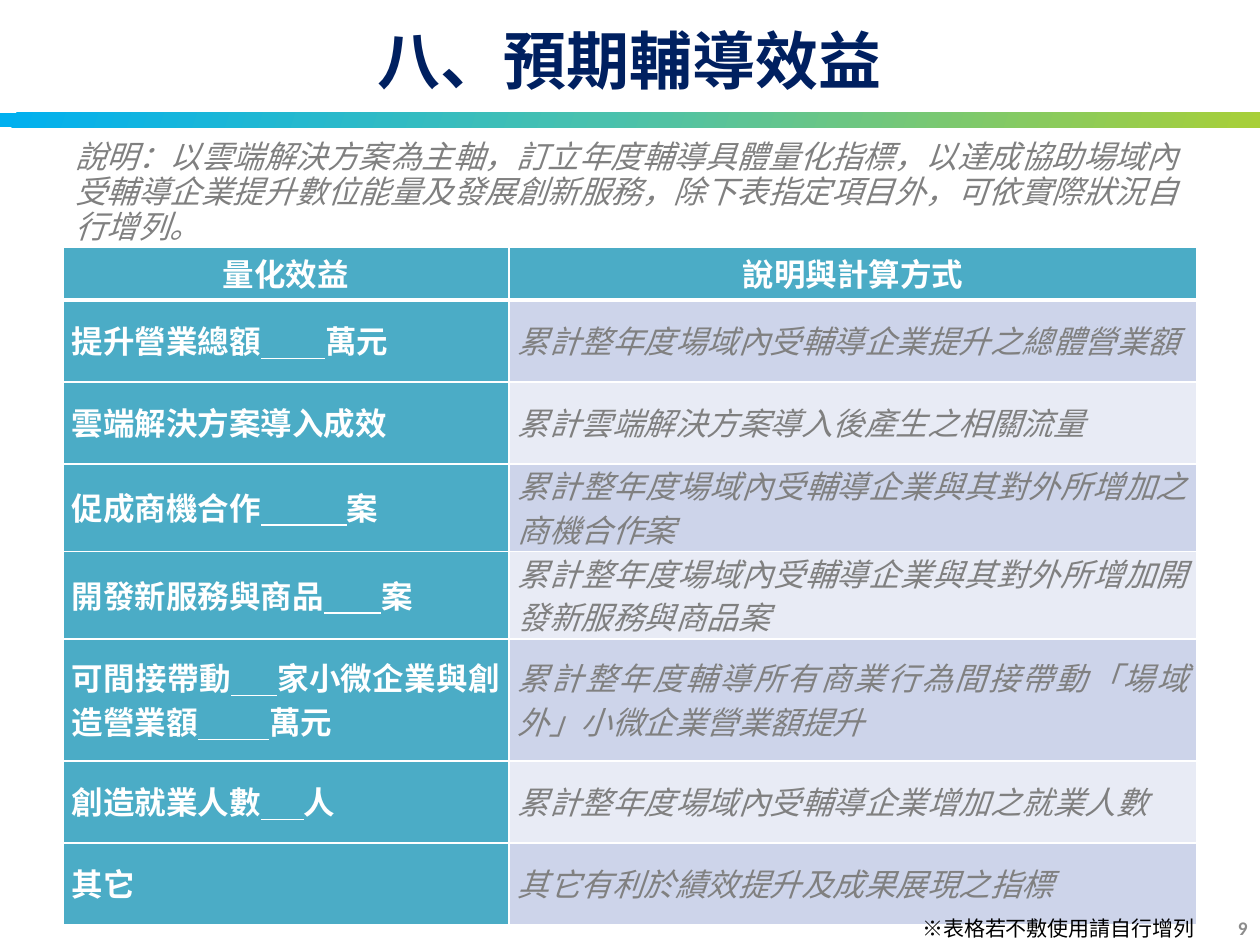
"""Build the slide on expected coaching benefits."""
from lxml import etree
from pptx import Presentation
from pptx.dml.color import RGBColor
from pptx.enum.shapes import MSO_SHAPE
from pptx.enum.text import MSO_ANCHOR, PP_ALIGN
from pptx.oxml import parse_xml
from pptx.oxml.ns import nsdecls, qn
from pptx.util import Cm, Pt

RECT = MSO_SHAPE.RECTANGLE
TOP, MID = MSO_ANCHOR.TOP, MSO_ANCHOR.MIDDLE
LEFT, MIDST, RIGHT, JUST = PP_ALIGN.LEFT, PP_ALIGN.CENTER, PP_ALIGN.RIGHT, PP_ALIGN.JUSTIFY
NAVY = RGBColor(0x00, 0x20, 0x60)
GREY = RGBColor(0x80, 0x80, 0x80)
PALE = RGBColor(0x8C, 0x8C, 0x8C)
BLACK = RGBColor(0x00, 0x00, 0x00)
WHITE = RGBColor(0xFF, 0xFF, 0xFF)
TEAL = RGBColor(0x4B, 0xAC, 0xC6)
BANDS = (RGBColor(0xCD, 0xD4, 0xEA), RGBColor(0xE8, 0xEB, 0xF5))
STOPS = (
    (0, RGBColor(0x00, 0xB0, 0xF0)),
    (48, RGBColor(0x49, 0xC1, 0xAD)),
    (100, RGBColor(0xA8, 0xCF, 0x38)),
)
HAN, ROMAN = "Noto Sans CJK SC", "Calibri"

HEADS = ("量化效益", "說明與計算方式")
GOALS = (
    (("提升營業總額", 9, "萬元"), "累計整年度場域內受輔導企業提升之總體營業額"),
    (("雲端解決方案導入成效",), "累計雲端解決方案導入後產生之相關流量"),
    (("促成商機合作", 12, "案"), "累計整年度場域內受輔導企業與其對外所增加之商機合作案"),
    (("開發新服務與商品", 8, "案"), "累計整年度場域內受輔導企業與其對外所增加開發新服務與商品案"),
    (("可間接帶動", 6, "家小微企業與創造營業額", 10, "萬元"),
     "累計整年度輔導所有商業行為間接帶動「場域外」小微企業營業額提升"),
    (("創造就業人數", 6, "人"), "累計整年度場域內受輔導企業增加之就業人數"),
    (("其它",), "其它有利於績效提升及成果展現之指標"),
)
NOTE = ("說明：以雲端解決方案為主軸，訂立年度輔導具體量化指標，以達成協助場域內"
        "受輔導企業提升數位能量及發展創新服務，除下表指定項目外，可依實際狀況自行增列。")
TEXTS = (
    ("八、預期輔導效益", (0, 0, 25.4, 2.39), MID, MIDST, None, HAN,
     {"size": Pt(36), "bold": True}, NAVY),
    ("9", (19.48, 18.19, 5.92, 1.02), MID, RIGHT, None, ROMAN,
     {"size": Pt(11), "bold": True}, PALE),
    (NOTE, (1.27, 2.69, 22.86, 2.39), TOP, LEFT, Pt(20), HAN,
     {"size": Pt(18), "italic": True}, GREY),
    ("※表格若不敷使用請自行增列", (18.14, 18.34, 6.4, 0.76), TOP, MIDST, None, HAN,
     {"size": Pt(12)}, BLACK),
)
COLS = (8.99, 13.87)
ROWS = (1.07, 1.65, 1.65, 1.65, 1.65, 2.46, 1.65, 1.65)
LABEL = {"size": Pt(18), "bold": True}
DETAIL = {"size": Pt(18), "bold": False, "italic": True}


def add_run(para, text, face, style, color):
    run = para.add_run()
    run.text = text
    for name, value in {**style, "name": face}.items():
        setattr(run.font, name, value)
    run.font.color.rgb = color
    east = etree.SubElement(run.font._element, qn("a:ea"))
    east.set("typeface", face)


def add_text(slide, text, place, anchor, align, pitch, face, style, color):
    frame = slide.shapes.add_textbox(*map(Cm, place)).text_frame
    frame.word_wrap = True
    frame.vertical_anchor = anchor
    para = frame.paragraphs[0]
    para.alignment = align
    para.line_spacing = pitch
    add_run(para, text, face, style, color)


def add_bar(slide):
    bar = slide.shapes.add_shape(RECT, 0, Cm(2.27), Cm(25.4), Cm(0.3))
    bar.shadow.inherit = False
    bar.line.fill.background()
    stops = "".join(f'<a:gs pos="{pos * 1000}"><a:srgbClr val="{color}"/></a:gs>'
                    for pos, color in STOPS)
    bar._element.spPr.find(qn("a:prstGeom")).addnext(parse_xml(
        f'<a:gradFill {nsdecls("a")}><a:gsLst>{stops}</a:gsLst>'
        '<a:lin ang="1080000" scaled="0"/></a:gradFill>'))


def fill_cell(cell, parts, align, style, color, back, base):
    cell.fill.solid()
    cell.fill.fore_color.rgb = back
    cell.vertical_anchor = MID
    cell.margin_left = cell.margin_right = Cm(0.18)
    cell.margin_top = cell.margin_bottom = 0
    para = cell.text_frame.paragraphs[0]
    para.alignment = align
    para.line_spacing = Pt(25)
    for part in parts:
        blank = isinstance(part, int)
        text = " " * part if blank else part
        add_run(para, text, HAN, {**style, "underline": blank}, color)
    widths = {"L": 1, "R": 1, "T": 1, "B": base}
    for spot, (side, width) in enumerate(widths.items()):
        cell._tc.get_or_add_tcPr().insert(spot, parse_xml(
            f'<a:ln{side} {nsdecls("a")} w="{Pt(width)}"><a:solidFill>'
            f'<a:srgbClr val="{WHITE}"/></a:solidFill></a:ln{side}>'))


def add_goals(slide):
    table = slide.shapes.add_table(len(ROWS), len(COLS), Cm(1.27), Cm(4.98),
                                   Cm(sum(COLS)), Cm(sum(ROWS))).table
    table.horz_banding = False
    for col, width in zip(table.columns, COLS):
        col.width = Cm(width)
    for row, height in zip(table.rows, ROWS):
        row.height = Cm(height)
    for col, head in enumerate(HEADS):
        fill_cell(table.cell(0, col), (head,), MIDST, LABEL, WHITE, TEAL, 3)
    for row, (goal, means) in enumerate(GOALS, 1):
        fill_cell(table.cell(row, 0), goal, JUST, LABEL, WHITE, TEAL, 1)
        fill_cell(table.cell(row, 1), (means,), JUST, DETAIL, GREY,
                  BANDS[(row - 1) % 2], 1)


def main():
    deck = Presentation()
    deck.slide_width, deck.slide_height = Cm(25.4), Cm(19.05)
    slide = deck.slides.add_slide(deck.slide_layouts[6])
    add_bar(slide)
    add_goals(slide)
    for item in TEXTS:
        add_text(slide, *item)
    deck.save("out.pptx")


if __name__ == "__main__":
    main()
